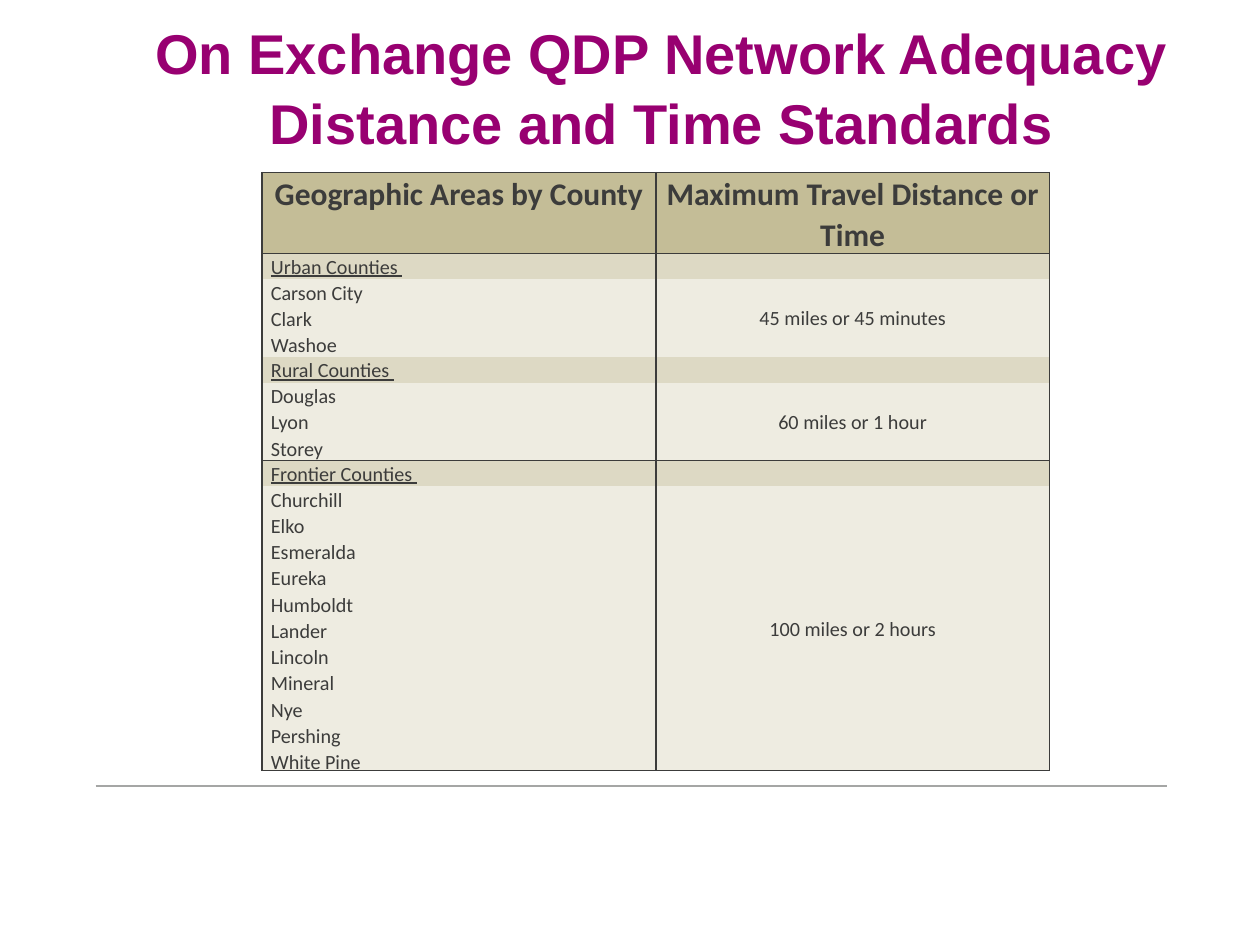
from dataclasses import dataclass

from lxml.etree import SubElement
from pptx import Presentation
from pptx.dml.color import RGBColor
from pptx.enum.shapes import MSO_CONNECTOR
from pptx.enum.text import MSO_ANCHOR, PP_ALIGN
from pptx.oxml.ns import qn
from pptx.util import Inches, Pt


@dataclass(frozen=True)
class Theme:
    title_font: str = "Arial"
    table_font: str = "Calibri"
    title_size: float = 32
    header_size: float = 18
    body_size: float = 11.5
    title_color: str = "980071"
    ink: str = "3C3C3B"
    rule: str = "A5A6A5"
    header_fill: str = "C4BD97"
    group_fill: str = "DDD9C4"
    body_fill: str = "EEECE1"
    line_width: float = 1
    table_spacing: float = 1.07


@dataclass(frozen=True)
class Row:
    texts: tuple
    height: float
    kind: str


class SlideBuilder:
    """Hold the theme and the current slide, and draw its elements."""

    def __init__(self, slide, theme):
        self.slide = slide
        self.theme = theme

    def rule(self, left, right, top):
        connector = self.slide.shapes.add_connector(
            MSO_CONNECTOR.STRAIGHT, Inches(left), Inches(top), Inches(right), Inches(top))
        connector.line.color.rgb = RGBColor.from_string(self.theme.rule)
        connector.line.width = Pt(self.theme.line_width)
        SubElement(connector._element.spPr, qn("a:effectLst"))

    def title(self, text, left, top, width, height):
        shape = self.slide.shapes.add_textbox(
            Inches(left), Inches(top), Inches(width), Inches(height))
        shape.text_frame.word_wrap = True
        shape.text_frame.text = text
        paragraph = shape.text_frame.paragraphs[0]
        paragraph.alignment = PP_ALIGN.CENTER
        paragraph.line_spacing = 1.04
        for run in paragraph.runs:
            self.format_font(run.font, self.theme.title_font, self.theme.title_size,
                             self.theme.title_color, bold=True)

    def format_font(self, font, name, size, color, bold=False, underline=False):
        font.name = name
        font.size = Pt(size)
        font.bold = bold
        font.underline = underline
        font.color.rgb = RGBColor.from_string(color)

    def borders(self, cell, sides):
        properties = cell._tc.get_or_add_tcPr()
        for side in "LRTB":
            line = SubElement(properties, qn(f"a:ln{side}"), w=str(Pt(self.theme.line_width)))
            if side in sides:
                fill = SubElement(line, qn("a:solidFill"))
                SubElement(fill, qn("a:srgbClr"), val=self.theme.ink)
            else:
                SubElement(line, qn("a:noFill"))

    def cell(self, cell, text, kind, centered, sides):
        theme = self.theme
        self.borders(cell, sides)
        fills = {"header": theme.header_fill, "group": theme.group_fill, "body": theme.body_fill}
        cell.fill.solid()
        cell.fill.fore_color.rgb = RGBColor.from_string(fills[kind])
        cell.margin_left = cell.margin_right = Inches(0.07)
        cell.margin_top = cell.margin_bottom = 0
        is_header = kind == "header"
        middle = centered and not is_header
        cell.vertical_anchor = MSO_ANCHOR.MIDDLE if middle else MSO_ANCHOR.TOP
        cell.text_frame.text = text
        size = theme.header_size if is_header else theme.body_size
        for paragraph in cell.text_frame.paragraphs:
            paragraph.alignment = PP_ALIGN.CENTER if centered or is_header else PP_ALIGN.LEFT
            paragraph.line_spacing = theme.table_spacing
            for run in paragraph.runs:
                self.format_font(run.font, theme.table_font, size, theme.ink,
                                 bold=is_header, underline=kind == "group")
            if not paragraph.runs:
                SubElement(paragraph._p, qn("a:endParaRPr"), sz=str(int(size * 100)))

    def table(self, rows, left, top, width, ruled_below):
        height = sum(row.height for row in rows)
        table = self.slide.shapes.add_table(
            len(rows), 2, Inches(left), Inches(top), Inches(width), Inches(height)).table
        table.first_row = False
        table.horz_banding = False
        for index, row in enumerate(rows):
            table.rows[index].height = Inches(row.height)
            sides = "LR"
            if index == 0 or index - 1 in ruled_below:
                sides += "T"
            if index in ruled_below:
                sides += "B"
            for column, text in enumerate(row.texts):
                self.cell(table.cell(index, column), text, row.kind, column == 1, sides)


GROUPS = (
    ("Urban Counties ", ("Carson City", "Clark", "Washoe"), "45 miles or 45 minutes"),
    ("Rural Counties ", ("Douglas", "Lyon", "Storey"), "60 miles or 1 hour"),
    ("Frontier Counties ",
     ("Churchill", "Elko", "Esmeralda", "Eureka", "Humboldt", "Lander", "Lincoln",
      "Mineral", "Nye", "Pershing", "White Pine"),
     "100 miles or 2 hours"),
)


def main():
    presentation = Presentation()
    presentation.slide_width = Inches(10)
    presentation.slide_height = Inches(7.5)
    slide = presentation.slides.add_slide(presentation.slide_layouts[6])
    builder = SlideBuilder(slide, Theme())

    builder.rule(0.76, 9.26, 6.24)
    builder.title("On Exchange QDP Network Adequacy\vDistance and Time Standards",
                  0.25, 0.08, 10, 0.79)

    rows = [Row(("Geographic Areas by County", "Maximum Travel Distance or Time"), 0.61, "header")]
    for name, counties, limit in GROUPS:
        rows.append(Row((name, ""), 0.2, "group"))
        rows.append(Row(("\n".join(counties), limit), round(0.195 * len(counties), 2), "body"))
    builder.table(rows, 2.08, 1.37, 6.25, ruled_below=(0, 4, 6))

    presentation.save("out.pptx")


if __name__ == "__main__":
    main()
